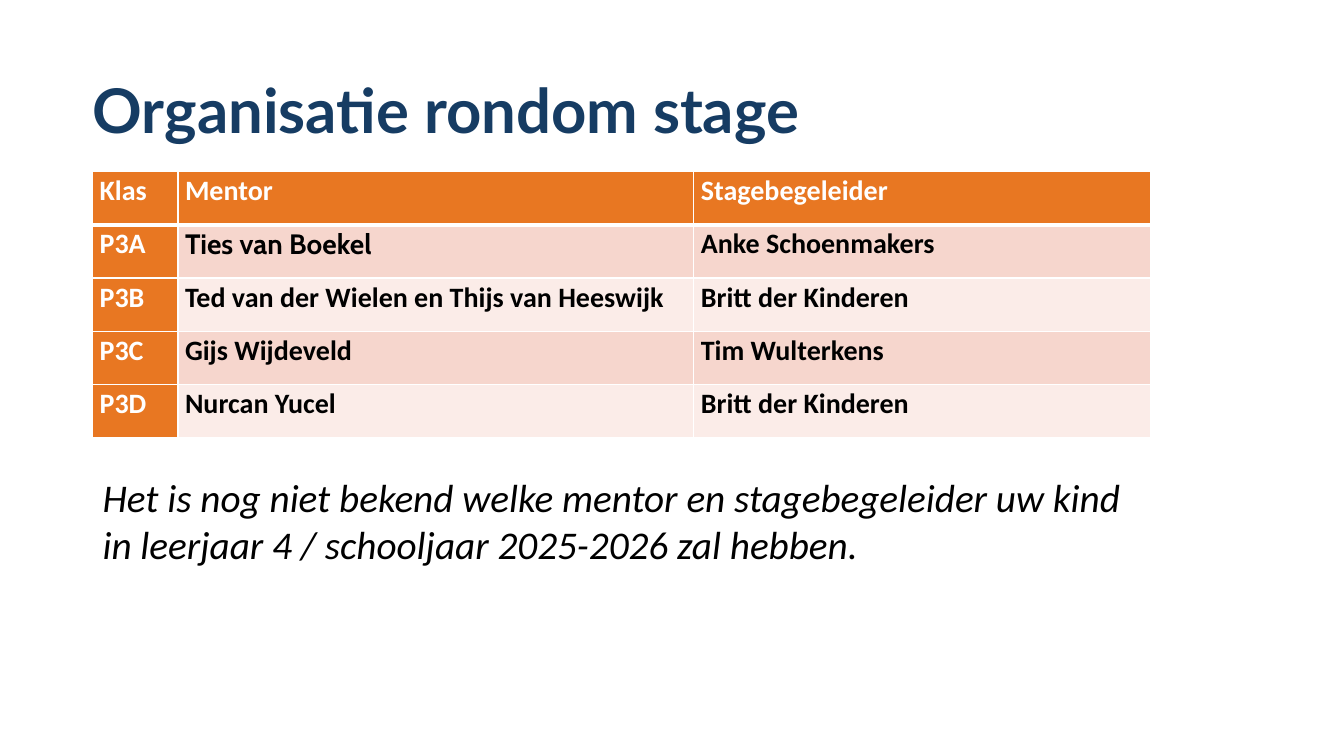
"""Build the slide on how the internships are organised."""
from dataclasses import dataclass

from lxml import etree
from pptx import Presentation
from pptx.dml.color import RGBColor
from pptx.enum.text import MSO_ANCHOR
from pptx.oxml.ns import qn
from pptx.util import Pt

MIDDLE = MSO_ANCHOR.MIDDLE

TITLE = "Organisatie rondom stage"
ROWS = [
    ("Klas", "Mentor", "Stagebegeleider"),
    ("P3A", "Ties van Boekel", "Anke Schoenmakers"),
    ("P3B", "Ted van der Wielen en Thijs van Heeswijk", "Britt der Kinderen"),
    ("P3C", "Gijs Wijdeveld", "Tim Wulterkens"),
    ("P3D", "Nurcan Yucel", "Britt der Kinderen"),
]
NOTE = ("Het is nog niet bekend welke mentor en stagebegeleider uw kind "
        "in leerjaar 4 / schooljaar 2025-2026 zal hebben.")
FONT_EXCEPTIONS = {(1, 1): "Cabin"}

LEFT = 66.2
CONTENT_WIDTH = 756
COLUMN_WIDTHS = (61, 368.5, 326.5)
ROW_HEIGHT = 38


@dataclass(frozen=True)
class Theme:
    title_font: str = "Lato"
    body_font: str = "Calibri"
    title_size: int = 44
    table_size: int = 20
    note_size: int = 28
    navy: str = "163C63"
    orange: str = "E87722"
    bands: tuple = ("F6D6CD", "FBECE8")
    white: str = "FFFFFF"
    black: str = "000000"


THEME = Theme()


def style(para, name, size, color, bold=False, italic=False):
    font = para.font
    font.name, font.size = name, Pt(size)
    font.bold, font.italic = bold, italic
    font.color.rgb = RGBColor.from_string(color)


def add_text(page, text, top, width, height):
    box = page.shapes.add_textbox(Pt(LEFT), Pt(top), Pt(width), Pt(height))
    box.text_frame.word_wrap = True
    para = box.text_frame.paragraphs[0]
    para.text = text
    return box.text_frame, para


def set_borders(cell, widths):
    properties = cell._tc.get_or_add_tcPr()
    for index, (side, width) in enumerate(widths.items()):
        line = etree.Element(qn(f"a:ln{side}"), w=str(Pt(width)))
        fill = etree.SubElement(line, qn("a:solidFill"))
        etree.SubElement(fill, qn("a:srgbClr"), val=THEME.white)
        properties.insert(index, line)


def fill_cell(cell, text, row, column):
    heading = row == 0 or column == 0
    cell.text = text
    cell.margin_left = cell.margin_right = Pt(5)
    cell.margin_top = cell.margin_bottom = 0
    cell.fill.solid()
    background = THEME.orange if heading else THEME.bands[(row - 1) % 2]
    cell.fill.fore_color.rgb = RGBColor.from_string(background)
    para = cell.text_frame.paragraphs[0]
    para.line_spacing = 1.07
    para.space_after = Pt(8)
    style(para, FONT_EXCEPTIONS.get((row, column), THEME.body_font),
          THEME.table_size, THEME.white if heading else THEME.black, bold=True)
    set_borders(cell, {"L": 1, "R": 1, "T": 3 if row == 1 else 1,
                       "B": 3 if row == 0 else 1})


def add_schedule(page):
    frame = page.shapes.add_table(len(ROWS), len(COLUMN_WIDTHS), Pt(LEFT), Pt(122.6),
                                  Pt(CONTENT_WIDTH), Pt(ROW_HEIGHT * len(ROWS)))
    table = frame.table
    for column, width in zip(table.columns, COLUMN_WIDTHS):
        column.width = Pt(width)
    for row, texts in enumerate(ROWS):
        table.rows[row].height = Pt(ROW_HEIGHT)
        for column, text in enumerate(texts):
            fill_cell(table.cell(row, column), text, row, column)


def main():
    deck = Presentation()
    deck.slide_width, deck.slide_height = Pt(960), Pt(540)
    page = deck.slides.add_slide(deck.slide_layouts[6])

    frame, para = add_text(page, TITLE, 28.8, 828, 104.4)
    frame.margin_left = frame.margin_right = frame.margin_top = frame.margin_bottom = 0
    frame.vertical_anchor = MIDDLE
    para.line_spacing = 0.9
    style(para, THEME.title_font, THEME.title_size, THEME.navy, bold=True)

    add_schedule(page)

    _, para = add_text(page, NOTE, 334.8, CONTENT_WIDTH, 75)
    style(para, THEME.body_font, THEME.note_size, THEME.black, italic=True)
    deck.save("out.pptx")


if __name__ == "__main__":
    main()
